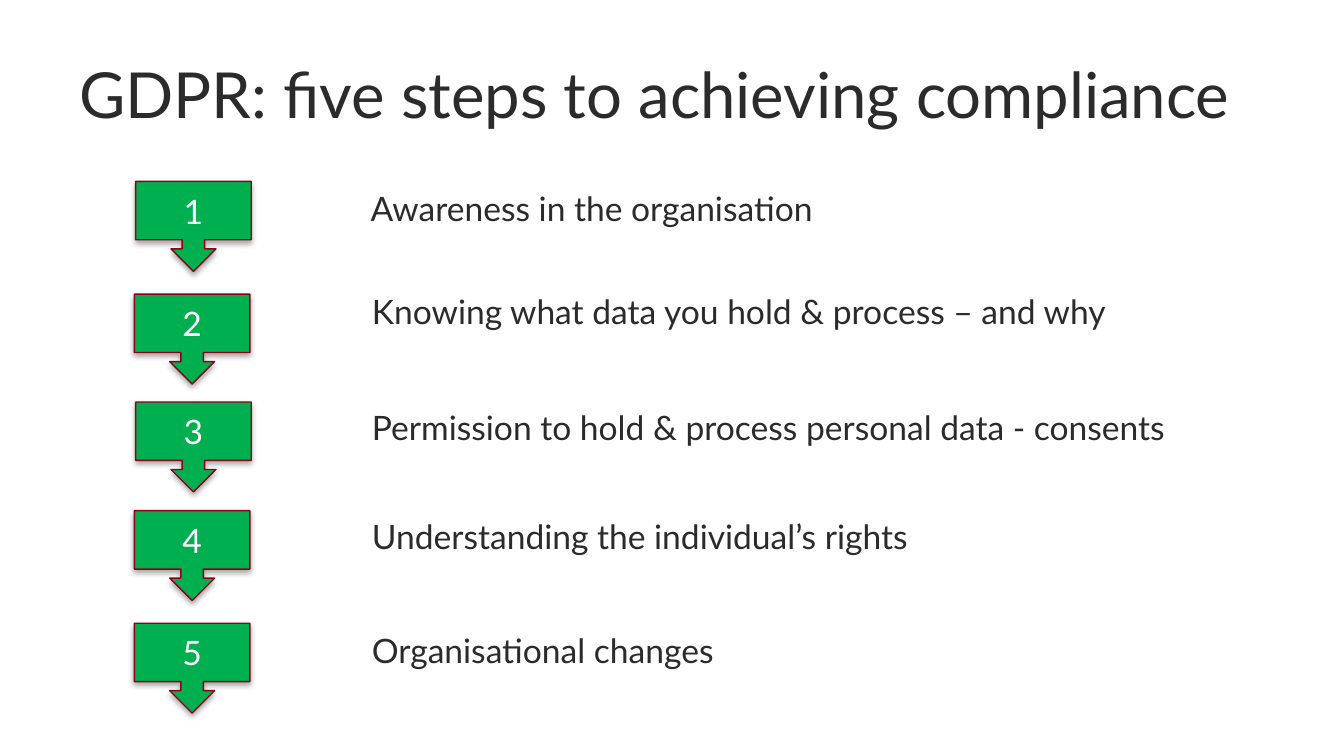
from lxml import etree
from pptx import Presentation, util as u
from pptx.dml.color import RGBColor
from pptx.enum import shapes, text
from pptx.oxml.ns import qn

Pt = u.Pt

# Content: step wording, arrow left and top, label left, top and width
TITLE = "GDPR: five steps to achieving compliance"
STEPS = [
    ("Awareness in the organisation", 72.7, 97.2, 191.5, 97.2, 262.8),
    ("Knowing what data you hold & process – and why", 72, 157.6, 192.2, 152.6, 422.6),
    ("Permission to hold & process personal data - consents", 72.7, 215.4, 192.2, 214.6, 460.8),
    ("Understanding the individual’s rights", 72, 273.6, 192.2, 272.9, 319),
    ("Organisational changes", 72, 333.9, 192.2, 334.1, 211),
]
THEME = {
    "font": "Lato", "ink": "2B2B2B", "white": "FFFFFF",
    "green": "00B050", "edge": "8E0016", "shade": "000000",
    "head": 34, "body": 18,
}
ARROW = (61.9, 48.2)


def color(key):
    return RGBColor.from_string(THEME[key])


def write(frame, words, size, ink, align=text.PP_ALIGN.LEFT):
    para = frame.paragraphs[0]
    para.alignment = align
    run = para.add_run()
    run.text = words
    run.font.name = THEME["font"]
    run.font.size = Pt(THEME[size])
    run.font.color.rgb = color(ink)


def label(words, box, size, wrap):
    frame = slide.shapes.add_textbox(*map(Pt, box)).text_frame
    frame.word_wrap = wrap
    frame.auto_size = text.MSO_AUTO_SIZE.SHAPE_TO_FIT_TEXT
    write(frame, words, size, "ink")


def shade(shape):
    """Soft shadow straight below the shape."""
    shape.shadow.inherit = False
    effects = shape.element.spPr.find(qn("a:effectLst"))
    outer = etree.SubElement(
        effects, qn("a:outerShdw"), blurRad=str(Pt(3.1)), dist=str(Pt(1.8)),
        dir="5400000", rotWithShape="0")
    tone = etree.SubElement(outer, qn("a:srgbClr"), val=THEME["shade"])
    etree.SubElement(tone, qn("a:alpha"), val="35000")


def arrow(num, left, top):
    shape = slide.shapes.add_shape(
        shapes.MSO_SHAPE.DOWN_ARROW_CALLOUT, *map(Pt, (left, top, *ARROW)))
    shape.fill.solid()
    shape.fill.fore_color.rgb = color("green")
    shape.line.color.rgb = color("edge")
    shape.line.width = Pt(0.75)
    shade(shape)
    frame = shape.text_frame
    frame.vertical_anchor = text.MSO_ANCHOR.MIDDLE
    write(frame, str(num), "body", "white", text.PP_ALIGN.CENTER)


deck = Presentation()
deck.slide_width, deck.slide_height = Pt(720), Pt(405)
slide = deck.slides.add_slide(deck.slide_layouts[6])

# Title
label(TITLE, (35.3, 25.9, 671, 74.9), "head", True)

# Numbered arrows with their steps
for num, (words, left, top, x, y, wide) in enumerate(STEPS, 1):
    arrow(num, left, top)
    label(words, (x, y, wide, 28.8), "body", False)

deck.save("out.pptx")
